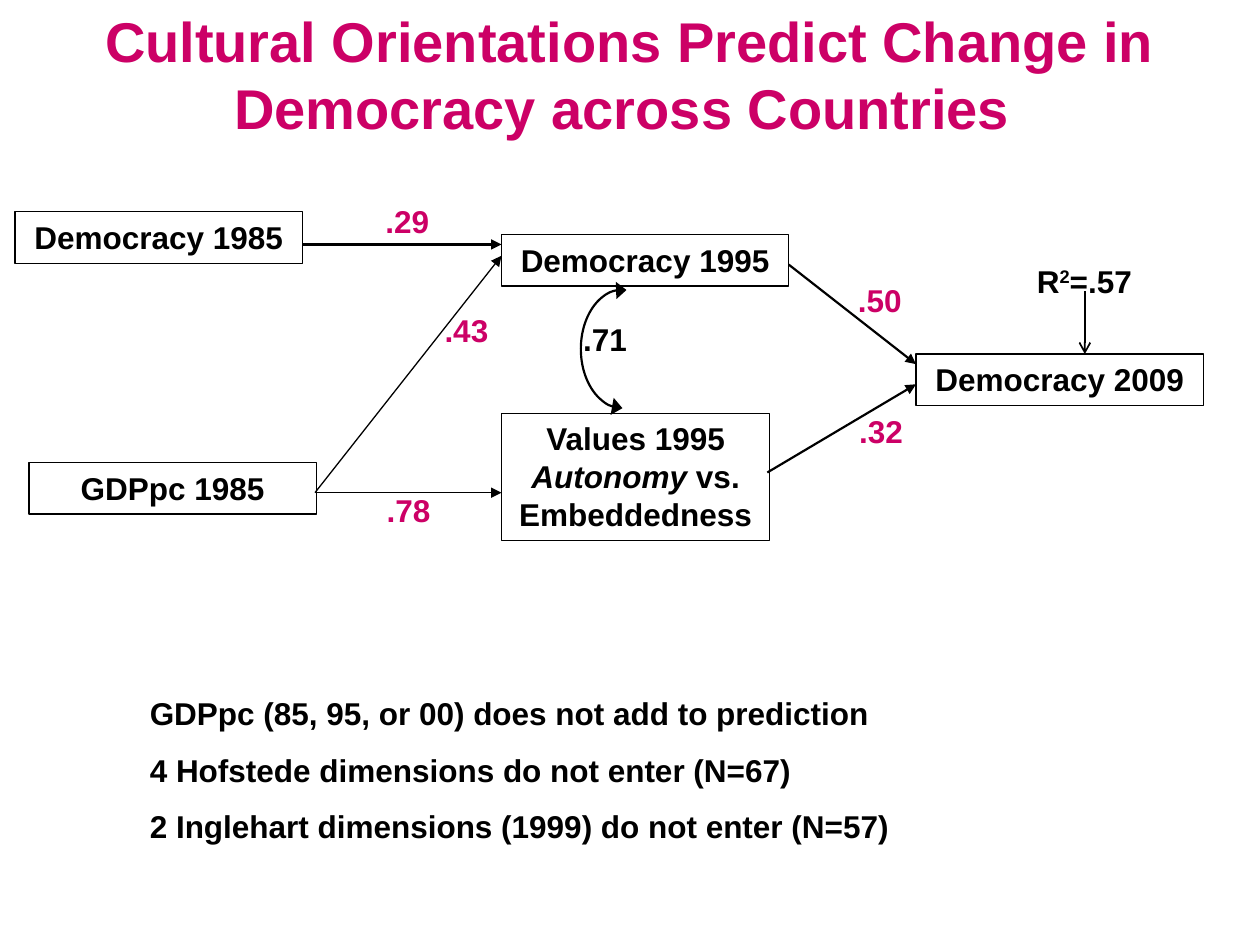
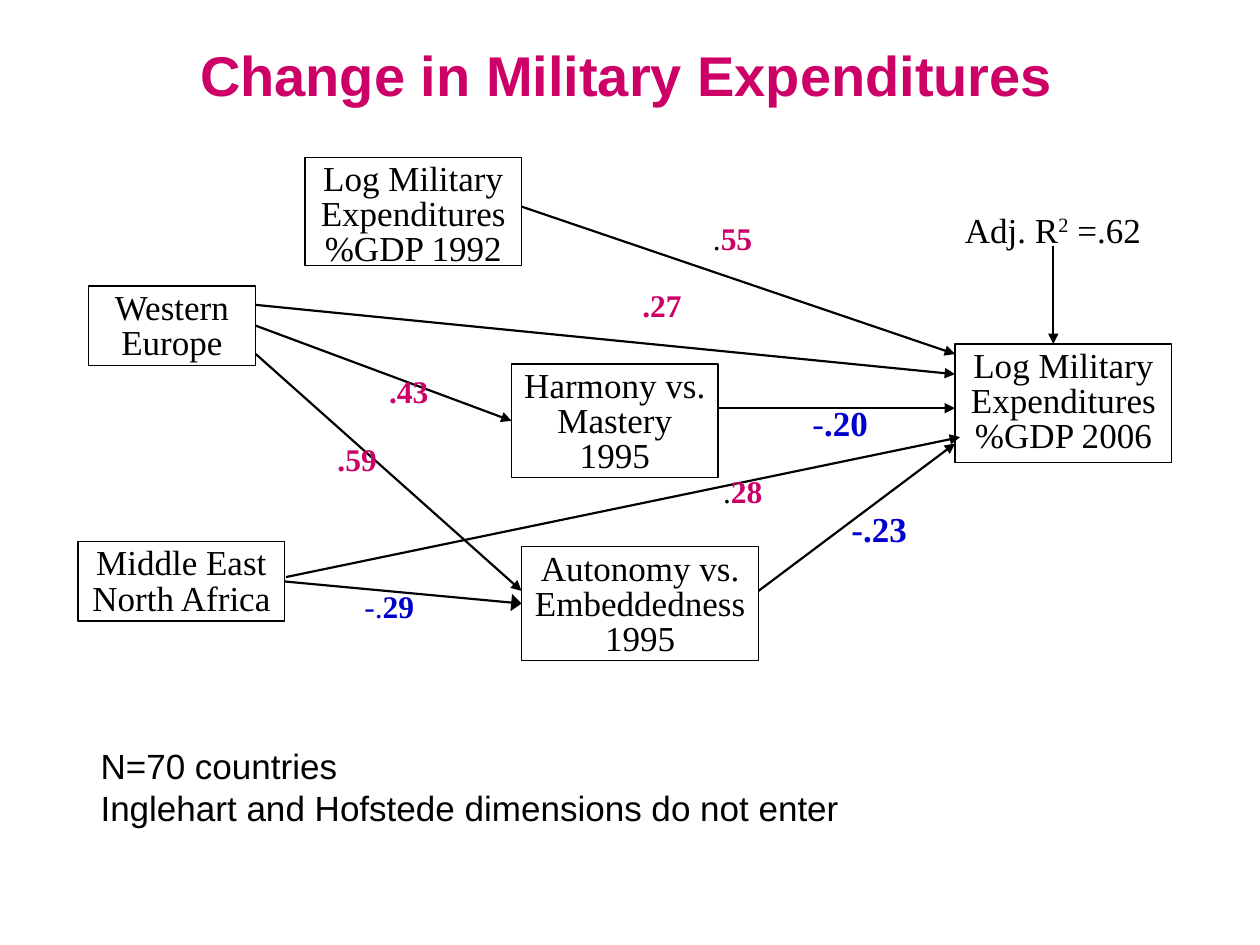
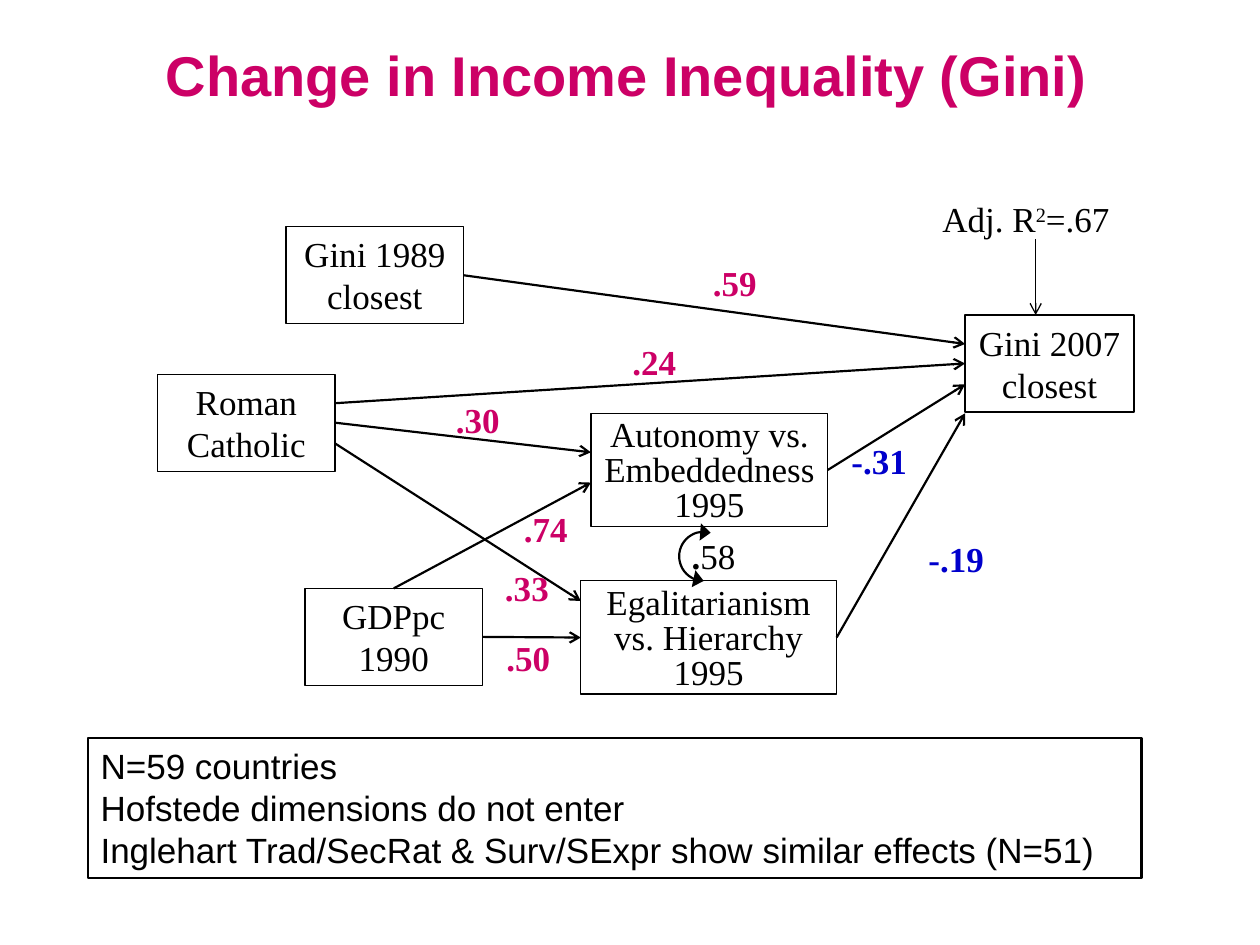
from dataclasses import dataclass, field
from typing import NamedTuple

from lxml.etree import SubElement
from pptx import Presentation
from pptx.dml.color import RGBColor
from pptx.enum.shapes import MSO_CONNECTOR, MSO_SHAPE
from pptx.enum.text import MSO_ANCHOR, PP_ALIGN
from pptx.oxml.ns import qn
from pptx.util import Inches, Pt

WIDE, HIGH = Inches(10), Inches(7.5)
COLS, ROWS = 100, 75
NEAR = 0.3  # a line end this close to a side's middle is joined to it

BLACK = RGBColor(0x00, 0x00, 0x00)
WHITE = RGBColor(0xFF, 0xFF, 0xFF)
PINK = RGBColor(0xCC, 0x00, 0x66)
BLUE = RGBColor(0x00, 0x00, 0xCC)

HEAD = {"name": "Arial", "size": Pt(32), "bold": True}
SANS = {"name": "Arial", "size": Pt(18), "bold": True}
NOTE = {"name": "Arial", "size": Pt(20), "bold": False}
SERIF = {"name": "Times New Roman", "size": Pt(20), "bold": False}
STRONG = {**SERIF, "bold": True}
SMALL = {**SERIF, "size": Pt(18)}
FIRM = {**SMALL, "bold": True}

MID = {"alignment": PP_ALIGN.CENTER}
TIGHT = {"line_spacing": Pt(20)}
LOOSE = {"line_spacing": 1.5}


class Run(NamedTuple):
    text: str
    font: dict
    ink: RGBColor = BLACK
    up: bool = False


class Area(NamedTuple):
    x: float
    y: float
    w: float
    h: float

    def mids(self) -> list:
        """Side middles in connection order: top, left, bottom, right."""
        cx, cy = self.x + self.w / 2, self.y + self.h / 2
        return [(cx, self.y), (self.x, cy), (cx, self.y + self.h), (self.x + self.w, cy)]


@dataclass(frozen=True)
class Box:
    area: Area
    paras: list
    form: dict = field(default_factory=dict)
    edge: float = 0
    fill: RGBColor | None = None
    wrap: bool = True


class Link(NamedTuple):
    x1: float
    y1: float
    x2: float
    y2: float
    tip: str = "triangle"
    width: float = 1.25
    broad: str = "med"


class Arc(NamedTuple):
    area: Area
    start: float  # degrees


@dataclass(frozen=True)
class Page:
    boxes: list
    links: list
    texts: list
    arcs: list = field(default_factory=list)


def col(n: float) -> int:
    return round(WIDE * n / COLS)


def row(n: float) -> int:
    return round(HIGH * n / ROWS)


def place(area: Area) -> tuple:
    return col(area.x), row(area.y), col(area.w), row(area.h)


def dress(item, form: dict) -> None:
    for key, val in form.items():
        setattr(item, key, val)


def stroke(shape, width: float, broad: str = "med", **tips: str) -> None:
    shape.line.color.rgb = BLACK
    shape.line.width = Pt(width)
    for end, kind in tips.items():
        SubElement(shape.line._get_or_add_ln(), qn(f"a:{end}"), type=kind, w=broad)


def write(frame, box: Box) -> None:
    dress(frame, {"word_wrap": box.wrap, "vertical_anchor": MSO_ANCHOR.TOP})
    for num, runs in enumerate(box.paras):
        para = frame.add_paragraph() if num else frame.paragraphs[0]
        dress(para, {"alignment": PP_ALIGN.LEFT, **box.form})
        for part in runs:
            run = para.add_run()
            run.text = part.text
            dress(run.font, part.font)
            run.font.color.rgb = part.ink
            if part.up:
                run._r.get_or_add_rPr().set("baseline", "30000")


def draw_box(slide, box: Box):
    if box.edge:
        shape = slide.shapes.add_shape(MSO_SHAPE.RECTANGLE, *place(box.area))
        shape.shadow.inherit = False
        stroke(shape, box.edge)
        if box.fill is None:
            shape.fill.background()
        else:
            shape.fill.solid()
            shape.fill.fore_color.rgb = box.fill
    else:
        shape = slide.shapes.add_textbox(*place(box.area))
    write(shape.text_frame, box)
    return shape


def join(bind, x: float, y: float, drawn: list) -> None:
    for area, shape in drawn:
        for side, (mx, my) in enumerate(area.mids()):
            if abs(mx - x) <= NEAR and abs(my - y) <= NEAR:
                bind(shape, side)
                return


def draw_link(slide, link: Link, drawn: list) -> None:
    line = slide.shapes.add_connector(
        MSO_CONNECTOR.STRAIGHT, col(link.x1), row(link.y1), col(link.x2), row(link.y2))
    stroke(line, link.width, link.broad, tailEnd=link.tip)
    SubElement(line._element.spPr, qn("a:effectLst"))
    join(line.begin_connect, link.x1, link.y1, drawn)
    join(line.end_connect, link.x2, link.y2, drawn)


def draw_arc(slide, arc: Arc) -> None:
    shape = slide.shapes.add_shape(MSO_SHAPE.ARC, *place(arc.area))
    shape.shadow.inherit = False
    shape.fill.background()
    shape.rotation = 270
    shape._element.spPr.find(qn("a:xfrm")).set("flipH", "1")
    shape.adjustments[0] = arc.start * 0.6  # degrees to shape units
    shape.adjustments[1] = 0
    stroke(shape, 1.25, "lg", headEnd="triangle", tailEnd="triangle")


def draw_page(deck, page: Page) -> None:
    slide = deck.slides.add_slide(deck.slide_layouts[6])
    drawn = [(box.area, draw_box(slide, box)) for box in page.boxes]
    for link in page.links:
        draw_link(slide, link, drawn)
    for arc in page.arcs:
        draw_arc(slide, arc)
    for text in page.texts:
        draw_box(slide, text)


def bold_box(x, y, w, h, *runs: Run) -> Box:
    return Box(Area(x, y, w, h), [runs], MID, 0.75)


def term(x, y, text: str) -> Box:
    return bold_box(x, y, 22.8, 4.1, Run(text, SANS))


def tight_box(x, y, w, h, text: str) -> Box:
    return Box(Area(x, y, w, h), [[Run(text, SERIF)]], {**MID, **TIGHT}, 0.75, WHITE)


def open_box(x, y, w, text: str) -> Box:
    return bold_box(x, y, w, 7.7, Run(text, SERIF))


def tag(x, y, *runs: Run, form: dict | None = None) -> Box:
    return Box(Area(x, y, 8.6, 3.8), [runs], form or {})


def mark(x, y, text: str, font: dict, ink: RGBColor = PINK) -> Box:
    return tag(x, y, Run(text, font, ink))


def fit(area: Area, lead: str, tail: str, font: dict, **more) -> Box:
    """Label that shows R squared."""
    return Box(area, [[Run(lead, font), Run("2", font, up=True), Run(tail, font)]], **more)


def title(text: str, area: Area = Area(1.3, 2.7, 96.9, 6.4)) -> Box:
    return Box(area, [[Run(text, HEAD, PINK)]], MID)


def notes(area: Area, lines: list, font: dict = NOTE, **more) -> Box:
    return Box(area, [[Run(line, font)] for line in lines], **more)


DEMOCRACY = Page(
    boxes=[
        term(2.3, 36.7, "GDPpc 1985"),
        term(39.8, 18.6, "Democracy 1995"),
        bold_box(39.8, 32.8, 21.3, 10.1, Run("Values 1995 ", SANS),
                 Run("Autonomy ", {**SANS, "italic": True}), Run("vs. Embeddedness", SANS)),
        term(72.7, 28.1, "Democracy 2009"),
        term(1.2, 16.8, "Democracy 1985"),
    ],
    links=[
        Link(25, 39.1, 39.8, 39.1, width=0.75),
        Link(25, 39.1, 39.8, 20.3, width=0.75),
        Link(60.9, 37.5, 72.7, 30.5),
        Link(62.6, 21, 72.7, 28.9),
        Link(24, 19.4, 39.8, 19.4),
        Link(86.1, 23.1, 86.1, 28.1, "arrow", 1),
    ],
    arcs=[Arc(Area(44.7, 24.4, 9.4, 6.6), 176.04)],
    texts=[
        title("Cultural Orientations Predict Change in Democracy across Countries ",
              Area(0, 0, 100, 11.7)),
        fit(Area(81.3, 20.3, 9.8, 4), "R", "=.57", SANS, wrap=False),
        mark(34.3, 24.2, ".43", SANS),
        mark(29.7, 38.5, ".78", SANS),
        mark(67.1, 21.8, ".50", SANS),
        mark(29.6, 15.5, ".29", SANS),
        mark(67.2, 32.2, ".32", SANS),
        mark(45.3, 24.9, ".71", SANS, BLACK),
        notes(Area(10.9, 53.1, 80.5, 14.6), [
            "GDPpc (85, 95, or 00) does not add to prediction",
            "4 Hofstede dimensions do not enter (N=67)",
            "2 Inglehart dimensions (1999) do not enter (N=57)",
        ], SANS, form=LOOSE),
    ],
)

MILITARY = Page(
    boxes=[
        tight_box(7, 22.7, 13.3, 6.3, "Western Europe"),
        tight_box(6.2, 43, 16.4, 6.3, "Middle East North Africa"),
        tight_box(24.2, 12.5, 17.2, 8.6, "Log Military Expenditures %GDP 1992"),
        tight_box(75.8, 27.3, 17.2, 9.4, "Log Military Expenditures %GDP 2006"),
        tight_box(40.6, 28.9, 16.4, 9, "Harmony vs. Mastery 1995"),
        tight_box(41.4, 43.4, 18.8, 9, "Autonomy vs. Embeddedness 1995"),
    ],
    links=[
        Link(57, 32.4, 75.8, 32.4),
        Link(60.2, 46.9, 75.8, 35.2),
        Link(41.4, 16.4, 75.8, 28.1),
        Link(20.3, 24.2, 75.8, 29.7),
        Link(22.7, 45.8, 76.2, 34.7),
        Link(22.7, 46.1, 41.2, 47.7, broad="lg"),
        Link(20.3, 25.8, 40.6, 33.6),
        Link(20.3, 28.1, 41.4, 46.9),
        Link(83.6, 19.5, 83.6, 27.3),
    ],
    texts=[
        title("Change in Military Expenditures"),
        tag(55.6, 16.9, Run(".", SMALL), Run("55", FIRM, PINK)),
        mark(66.6, 39.8, "-.23", STRONG, BLUE),
        tag(56.4, 37, Run(".", SMALL), Run("28", FIRM, PINK)),
        mark(50, 22.2, ".27", FIRM),
        tag(63.5, 31.4, Run("-", SERIF, BLUE), Run(".20", STRONG, BLUE)),
        mark(29.9, 29, ".43", FIRM),
        tag(26.6, 46.1, Run("-.", SMALL, BLUE), Run("29", FIRM, BLUE), form=MID),
        mark(25.8, 34.4, ".59", FIRM),
        fit(Area(75.6, 16.6, 16.4, 4.5), "Adj. R", " =.62", SERIF, form=TIGHT),
        notes(Area(7, 58.6, 83.6, 7.7),
              ["N=70 countries", "Inglehart and Hofstede dimensions do not enter"]),
    ],
)

INCOME = Page(
    boxes=[
        open_box(22.7, 18, 14.1, "Gini 1989 closest"),
        open_box(76.6, 25, 13.4, "Gini 2007 closest"),
        open_box(12.5, 29.7, 14.1, "Roman Catholic"),
        open_box(24.2, 46.7, 14.1, "GDPpc 1990"),
        tight_box(46.9, 32.8, 18.8, 9, "Autonomy vs. Embeddedness 1995"),
        tight_box(46.1, 46.1, 20.3, 9, "Egalitarianism vs. Hierarchy 1995"),
    ],
    links=[Link(*ends, "arrow") for ends in [
        (36.7, 21.8, 76.6, 27.3),
        (26.6, 32, 76.6, 28.9),
        (26.6, 35.2, 46.1, 47.7),
        (38.3, 50.5, 46.1, 50.6),
        (26.6, 33.6, 46.9, 35.9),
        (31.2, 46.7, 46.9, 38.3),
        (65.6, 37.3, 76.6, 30.5),
        (66.4, 50.6, 76.6, 32.8),
    ]] + [Link(82.2, 19, 82.2, 25, "arrow", 0.75)],
    arcs=[Arc(Area(53.9, 42.2, 3.9, 3.9), 163.64)],
    texts=[
        title("Change in Income Inequality (Gini)"),
        mark(72.7, 42.2, "-.19", STRONG, BLUE),
        mark(66.6, 34.4, "-.31", STRONG, BLUE),
        mark(55.6, 20.3, ".59", STRONG),
        mark(49.2, 26.5, ".24", STRONG),
        mark(35.2, 31.1, ".30", STRONG),
        mark(39.2, 50, ".50", STRONG),
        mark(39.1, 44.5, ".33", STRONG),
        mark(40.6, 39.8, ".74", STRONG),
        tag(53.9, 41.9, Run(".", STRONG), Run("58", SERIF)),
        fit(Area(73.8, 15.2, 16.9, 4.4), "Adj. R", "=.67", SERIF),
        notes(Area(7, 58.6, 83.6, 11.1), [
            "N=59 countries",
            "Hofstede dimensions do not enter",
            "Inglehart Trad/SecRat & Surv/SExpr show similar effects (N=51)",
        ], edge=1.25),
    ],
)


def main() -> None:
    deck = Presentation()
    dress(deck, {"slide_width": WIDE, "slide_height": HIGH})
    for page in (DEMOCRACY, MILITARY, INCOME):
        draw_page(deck, page)
    deck.save("out.pptx")


if __name__ == "__main__":
    main()
